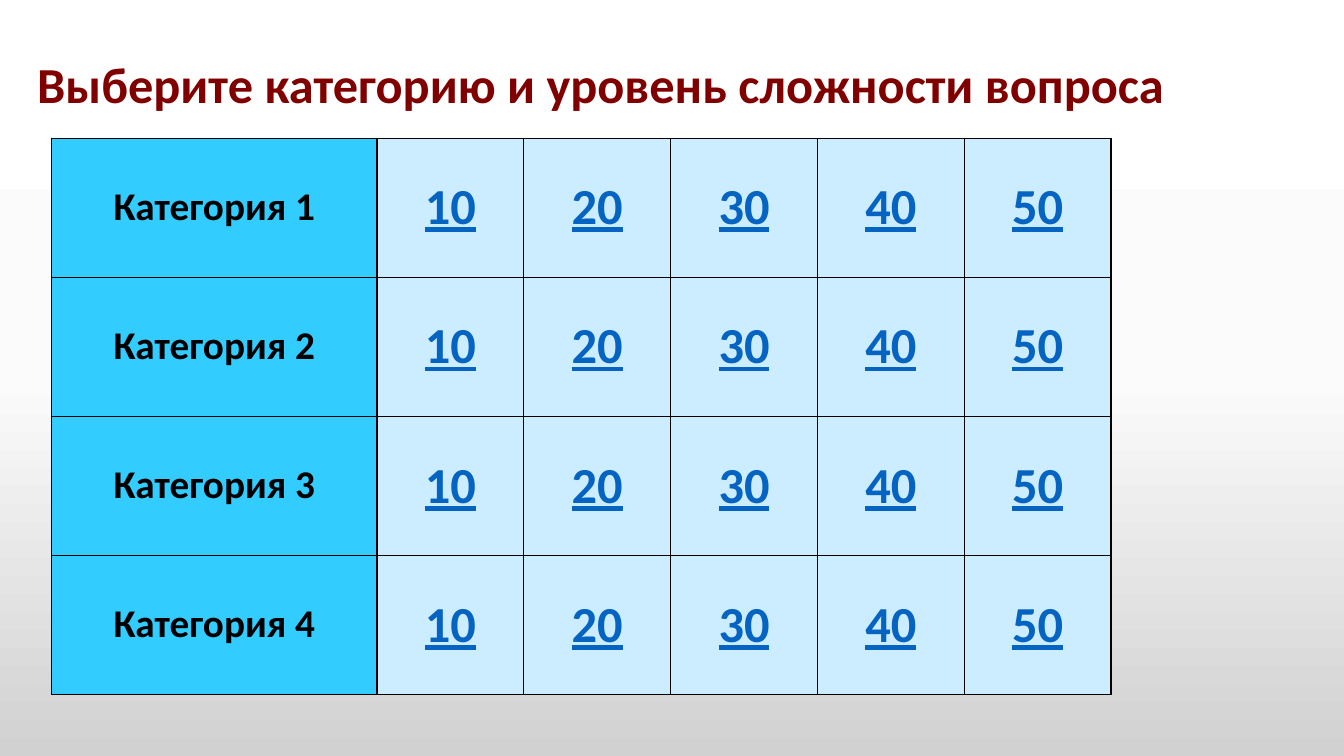
from copy import deepcopy

from lxml import etree
from pptx import Presentation
from pptx.dml.color import RGBColor
from pptx.enum.text import MSO_ANCHOR, MSO_AUTO_SIZE, PP_ALIGN
from pptx.oxml.ns import qn
from pptx.util import Inches, Pt

CENTER = PP_ALIGN.CENTER
MIDDLE = MSO_ANCHOR.MIDDLE
FIT_SHAPE = MSO_AUTO_SIZE.SHAPE_TO_FIT_TEXT

HEADING = "Выберите категорию и уровень сложности вопроса"
CATEGORIES = ["Категория 1", "Категория 2", "Категория 3", "Категория 4"]
POINTS = ["10", "20", "30", "40", "50"]
BACKDROP = [(0, "FFFFFF"), (50, "FBFBFB"), (100, "D1D1D1")]

FONT = "Calibri"
HEADING_COLOR = "800000"
CATEGORY_STYLE = {"fill": "33CCFF", "color": "000000", "size": 28}
POINTS_STYLE = {"fill": "CCECFF", "color": "0563C1", "size": 36, "underline": True}
BORDER_COLOR = "000000"
BORDER_WIDTH = 1

BOARD_LEFT, BOARD_TOP = 0.51, 1.37
CATEGORY_WIDTH, POINTS_WIDTH, ROW_HEIGHT = 3.23, 1.456, 1.38


def rgb(value):
    return RGBColor.from_string(value)


def set_font(paragraph, size, color, underline=None):
    font = paragraph.font
    font.name = FONT
    font.size = Pt(size)
    font.bold = True
    font.underline = underline
    font.color.rgb = rgb(color)


def paint_backdrop(slide):
    fill = slide.background.fill
    fill.gradient()
    fill.gradient_angle = 270
    stop_list = slide.element.find(".//" + qn("a:gsLst"))
    stop_list.insert(1, deepcopy(stop_list[0]))
    for stop, (position, color) in zip(fill.gradient_stops, BACKDROP):
        stop.position = position / 100
        stop.color.rgb = rgb(color)


def add_borders(cell):
    properties = cell._tc.get_or_add_tcPr()
    for side in ("lnL", "lnR", "lnT", "lnB"):
        line = etree.SubElement(properties, qn(f"a:{side}"), w=str(Pt(BORDER_WIDTH)))
        solid = etree.SubElement(line, qn("a:solidFill"))
        etree.SubElement(solid, qn("a:srgbClr"), val=BORDER_COLOR)


def write_cell(cell, text, fill, color, size, underline=None):
    add_borders(cell)
    cell.fill.solid()
    cell.fill.fore_color.rgb = rgb(fill)
    cell.vertical_anchor = MIDDLE
    cell.text = text
    paragraph = cell.text_frame.paragraphs[0]
    paragraph.alignment = CENTER
    set_font(paragraph, size, color, underline)
    return paragraph


def add_heading(slide):
    box = slide.shapes.add_textbox(Inches(0.27), Inches(0.48), Inches(11.49), Inches(0.71))
    frame = box.text_frame
    frame.word_wrap = False
    frame.auto_size = FIT_SHAPE
    frame.text = HEADING
    set_font(frame.paragraphs[0], 36, HEADING_COLOR)


def add_board(slide):
    widths = [CATEGORY_WIDTH] + [POINTS_WIDTH] * len(POINTS)
    board = slide.shapes.add_table(
        len(CATEGORIES), len(widths), Inches(BOARD_LEFT), Inches(BOARD_TOP),
        Inches(sum(widths)), Inches(ROW_HEIGHT * len(CATEGORIES))).table
    board.first_row = False
    board.horz_banding = False
    for column, width in zip(board.columns, widths):
        column.width = Inches(width)
    for row, category in zip(board.rows, CATEGORIES):
        row.height = Inches(ROW_HEIGHT)
        category_cell, *points_cells = row.cells
        write_cell(category_cell, category, **CATEGORY_STYLE).line_spacing = 0.9
        for cell, points in zip(points_cells, POINTS):
            write_cell(cell, points, **POINTS_STYLE)


def main():
    prs = Presentation()
    prs.slide_width, prs.slide_height = Inches(13.33), Inches(7.5)
    slide = prs.slides.add_slide(prs.slide_layouts[6])
    paint_backdrop(slide)
    add_heading(slide)
    add_board(slide)
    prs.save("out.pptx")


if __name__ == "__main__":
    main()
